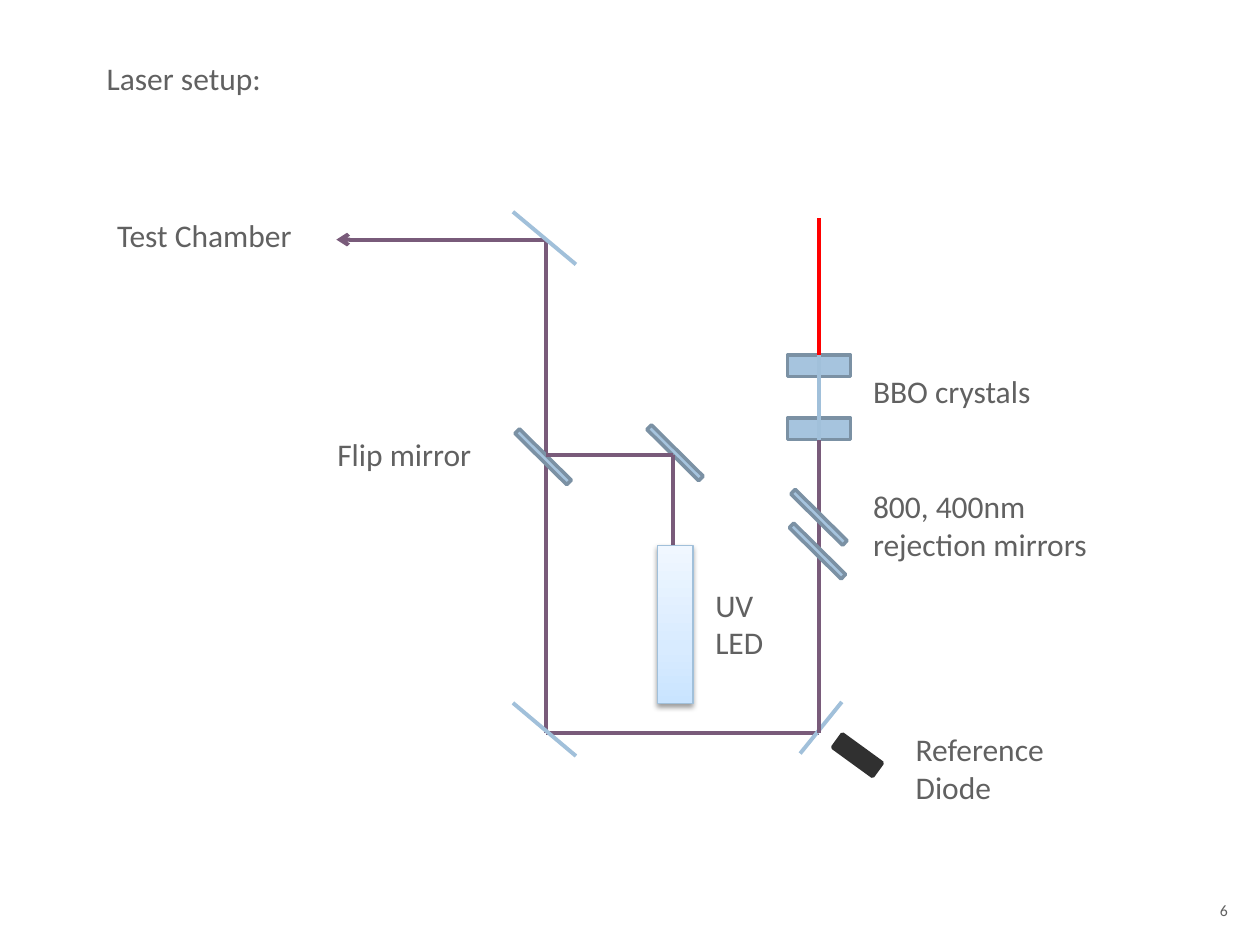
import copy

import pptx
import pptx.dml.color
import pptx.enum.shapes
import pptx.enum.text
import pptx.oxml
import pptx.oxml.ns
import pptx.util

Cm, Pt = pptx.util.Cm, pptx.util.Pt
RECTANGLE = pptx.enum.shapes.MSO_SHAPE.RECTANGLE
STRAIGHT = pptx.enum.shapes.MSO_CONNECTOR.STRAIGHT
ALIGN = pptx.enum.text.PP_ALIGN

COLORS = {
    "text": "616161", "glass": "A6C4DE", "glass edge": "7B91A4",
    "infrared": "FF0000", "blue": "A1C0DA", "ultraviolet": "795B7A",
    "diode": "303030", "led bottom": "C9E4FF", "led middle": "D8EBFF",
    "led top": "F0F7FF", "shadow": "000000",
}

# Optical axes, in cm
LASER_X, RETURN_X, LED_X = 16.51, 11.0, 13.56
TOP_Y, FLIP_Y, BOTTOM_Y = 4.83, 9.17, 14.78

# Crystals: size and tops
CRYSTAL_SIZE = (1.27, 0.43)
CRYSTAL_TOPS = [7.16, 8.43]
CRYSTAL_END = CRYSTAL_TOPS[-1] + CRYSTAL_SIZE[1]

# Lines: start, end, colour
infrared_beam = ((LASER_X, 4.39), (LASER_X, 7.57), "infrared")
beam_corners = [(LASER_X, BOTTOM_Y), (RETURN_X, BOTTOM_Y),
                (RETURN_X, TOP_Y), (6.78, TOP_Y)]
corner_mirrors = [
    ((16.97, 14.15), (16.13, 15.19), "blue"),
    ((11.61, 15.24), (10.34, 14.17), "blue"),
    ((11.61, 5.33), (10.34, 4.27), "blue"),
]
blue_beam = ((LASER_X, CRYSTAL_TOPS[0]), (LASER_X, CRYSTAL_END), "blue")
filtered_beam = ((LASER_X, CRYSTAL_END), (LASER_X, BOTTOM_Y), "ultraviolet")
led_beams = [
    ((LED_X, FLIP_Y), (RETURN_X, FLIP_Y), "ultraviolet"),
    ((LED_X, FLIP_Y), (LED_X, 11.07), "ultraviolet"),
]

# Tilted mirrors: centres of two rejection mirrors, flip mirror, LED mirror
MIRROR_SIZE = (1.47, 0.13)
mirror_centres = [(16.51, 10.43), (16.48, 11.11), (10.95, 9.21), (13.61, 9.13)]

# Labels: left, top, width, height, paragraphs
labels = [
    (17.35, 7.37, 4.65, 1.02, ["BBO crystals"]),
    (17.35, 9.7, 5.92, 1.8, ["800, 400nm rejection mirrors"]),
    (2.11, 4.24, 4.65, 1.02, ["Test Chamber"]),
    (14.17, 11.68, 1.7, 1.8, ["UV", "LED"]),
    (6.55, 8.64, 3.38, 1.02, ["Flip mirror"]),
    (1.9, 1.07, 12.5, 1.02, ["Laser setup:"]),
    (18.21, 14.6, 3.38, 1.8, ["Reference Diode"]),
]
page_number = (23.93, 18.03, 1.07, 1.02, ["6"])


def rgb(name):
    return pptx.dml.color.RGBColor.from_string(COLORS[name])


def add_block(slide, left, top, size, fill, edge, width, rotation=0):
    block = slide.shapes.add_shape(RECTANGLE, Cm(left), Cm(top), *map(Cm, size))
    block.shadow.inherit = False
    block.rotation = rotation
    block.fill.solid()
    block.fill.fore_color.rgb = rgb(fill)
    block.line.color.rgb = rgb(edge)
    block.line.width = Pt(width)
    return block


def add_line(slide, start, end, color):
    line = slide.shapes.add_connector(STRAIGHT, *map(Cm, start + end))
    line.line.color.rgb = rgb(color)
    line.line.width = Pt(2.25)
    pptx.oxml.ns.qn("a:effectLst")
    properties = line._element.spPr
    properties.append(properties.makeelement(pptx.oxml.ns.qn("a:effectLst"), {}))
    return line


def add_label(slide, left, top, width, height, lines, size=18, align=ALIGN.LEFT):
    box = slide.shapes.add_textbox(*map(Cm, (left, top, width, height)))
    frame = box.text_frame
    frame.word_wrap = True
    frame.text = "\n".join(lines)
    for paragraph in frame.paragraphs:
        paragraph.alignment = align
        paragraph.font.name = "Calibri"
        paragraph.font.size = Pt(size)
        paragraph.font.color.rgb = rgb("text")


def add_led(slide):
    led = add_block(slide, 13.26, 11.0, (0.71, 3.18), "led top", "blue", 0.75)
    led.fill.gradient()
    led.fill.gradient_angle = 90
    first = led._element.spPr.find(".//" + pptx.oxml.ns.qn("a:gs"))
    first.addnext(copy.deepcopy(first))
    shades = [(0, "led bottom"), (0.35, "led middle"), (1, "led top")]
    for stop, (position, color) in zip(led.fill.gradient_stops, shades):
        stop.position = position
        stop.color.rgb = rgb(color)
    effects = led._element.spPr.find(pptx.oxml.ns.qn("a:effectLst"))
    effects.append(pptx.oxml.parse_xml(
        f'<a:outerShdw {pptx.oxml.ns.nsdecls("a")} blurRad="{Pt(3.1)}" '
        f'dist="{Pt(1.6)}" dir="5400000" rotWithShape="0">'
        f'<a:srgbClr val="{COLORS["shadow"]}"><a:alpha val="38000"/></a:srgbClr>'
        '</a:outerShdw>'))


def add_tilted_mirror(slide, x, y):
    width, height = MIRROR_SIZE
    add_block(slide, x - width / 2, y - height / 2, MIRROR_SIZE,
              "glass", "glass edge", 2, 44.7)


def main():
    deck = pptx.Presentation()
    deck.slide_width, deck.slide_height = Cm(25.4), Cm(19.05)
    slide = deck.slides.add_slide(deck.slide_layouts[6])

    # Crystals and the main beam path
    upper, lower = [
        add_block(slide, LASER_X - CRYSTAL_SIZE[0] / 2, top, CRYSTAL_SIZE,
                  "glass", "glass edge", 2)
        for top in CRYSTAL_TOPS]
    add_line(slide, *infrared_beam)
    for start, end in zip(beam_corners, beam_corners[1:]):
        beam = add_line(slide, start, end, "ultraviolet")
    outline = beam.line._get_or_add_ln()
    outline.append(outline.makeelement(pptx.oxml.ns.qn("a:tailEnd"), {"type": "arrow"}))
    for mirror in corner_mirrors:
        add_line(slide, *mirror)
    doubled = add_line(slide, *blue_beam)
    doubled.begin_connect(upper, 0)
    doubled.end_connect(lower, 2)
    add_line(slide, *filtered_beam).begin_connect(lower, 2)

    # Tilted mirrors, LED branch and reference diode
    for x, y in mirror_centres:
        add_tilted_mirror(slide, x, y)
    for led_beam in led_beams:
        add_line(slide, *led_beam)
    add_led(slide)
    add_block(slide, 16.79, 15.06, (0.99, 0.33), "diode", "diode", 2.25, 36)

    # Labels and page number
    for label in labels:
        add_label(slide, *label)
    add_label(slide, *page_number, size=9, align=ALIGN.RIGHT)

    deck.save("out.pptx")


if __name__ == "__main__":
    main()
